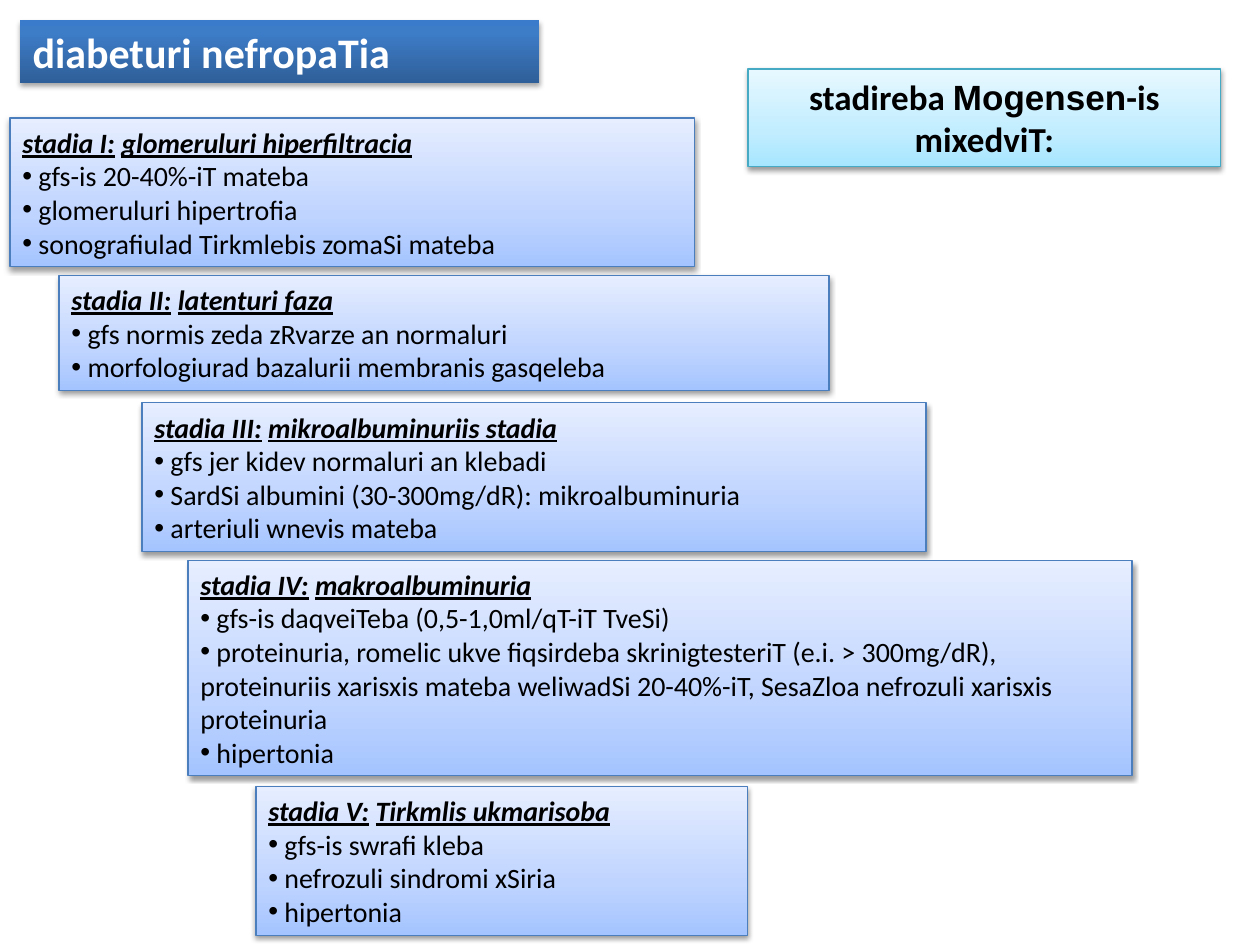
from lxml import etree
from pptx import Presentation
from pptx.dml.color import RGBColor
from pptx.enum import shapes, text
from pptx.oxml import parse_xml
from pptx.oxml.ns import nsdecls, qn
from pptx.util import Pt

FONT = "Calibri"
BLUE = [(0, "A4C4FF"), (35, "BFD4FF"), (100, "E6EEFF")]
CYAN = [(0, "A7E6FF"), (35, "C1EDFF"), (100, "E7F8FF")]
NAVY = [(0, "2F5F99"), (80, "3D7CC7"), (100, "3A7CCB")]

# Position and size in points, number, name, findings
STAGES = [
    ((5.76, 67.5, 391, 85), "I", "glomeruluri hiperfiltracia",
     ["gfs-is 20-40%-iT mateba",
      "glomeruluri hipertrofia",
      "sonografiulad Tirkmlebis zomaSi mateba"]),
    ((33.8, 157.5, 440, 65.5), "II", "latenturi faza",
     ["gfs normis zeda zRvarze an normaluri",
      "morfologiurad bazalurii membranis gasqeleba"]),
    ((81.2, 230.2, 448, 85), "III", "mikroalbuminuriis stadia",
     ["gfs jer kidev normaluri an klebadi",
      "SardSi albumini (30-300mg/dR): mikroalbuminuria",
      "arteriuli wnevis mateba"]),
    ((107.5, 320.5, 539.5, 122.5), "IV", "makroalbuminuria",
     ["gfs-is daqveiTeba (0,5-1,0ml/qT-iT TveSi)",
      "proteinuria, romelic ukve fiqsirdeba skrinigtesteriT (e.i. > 300mg/dR), "
      "proteinuriis xarisxis mateba weliwadSi 20-40%-iT, SesaZloa nefrozuli "
      "xarisxis proteinuria",
      "hipertonia"]),
    ((146.3, 449.4, 281, 85), "V", "Tirkmlis ukmarisoba",
     ["gfs-is swrafi kleba",
      "nefrozuli sindromi xSiria",
      "hipertonia"]),
]


def color(value):
    return RGBColor.from_string(value)


def fill_upward(shape, stops):
    """Fill with a gradient whose first stop lies at the bottom."""
    shape.fill.gradient()
    shape.fill.gradient_angle = 90
    stop_list = shape._element.spPr.find(qn("a:gradFill")).find(qn("a:gsLst"))
    for stop in list(stop_list):
        stop_list.remove(stop)
    for percent, value in stops:
        stop = etree.SubElement(stop_list, qn("a:gs"), pos=str(percent * 1000))
        etree.SubElement(stop, qn("a:srgbClr"), val=value)


def add_shadow(shape, distance, opacity):
    shape.shadow.inherit = False
    effects = shape._element.spPr.find(qn("a:effectLst"))
    effects.append(parse_xml(
        f'<a:outerShdw {nsdecls("a")} blurRad="{Pt(3.1)}" dist="{Pt(distance)}" '
        f'dir="5400000" rotWithShape="0"><a:srgbClr val="000000">'
        f'<a:alpha val="{opacity * 1000}"/></a:srgbClr></a:outerShdw>'))


def add_panel(page, place, stops, line=None, distance=1.6, opacity=38):
    panel = page.shapes.add_shape(shapes.MSO_SHAPE.RECTANGLE, *map(Pt, place))
    fill_upward(panel, stops)
    if line:
        panel.line.color.rgb = color(line)
        panel.line.width = Pt(0.75)
    else:
        panel.line.fill.background()
    add_shadow(panel, distance, opacity)
    frame = panel.text_frame
    frame.word_wrap = True
    frame.auto_size = text.MSO_AUTO_SIZE.SHAPE_TO_FIT_TEXT
    frame.vertical_anchor = text.MSO_ANCHOR.MIDDLE
    frame.paragraphs[0].alignment = text.PP_ALIGN.LEFT
    return frame


def add_span(para, words, size, value="000000", name=FONT, bold=False,
             italic=False, underline=False):
    span = para.add_run()
    span.text = words
    font = span.font
    font.size, font.name = Pt(size), name
    font.color.rgb = color(value)
    font.bold, font.italic, font.underline = bold, italic, underline


def add_bullet(frame, words):
    para = frame.add_paragraph()
    para.alignment = text.PP_ALIGN.LEFT
    properties = para._p.get_or_add_pPr()
    etree.SubElement(properties, qn("a:buFont"), typeface="Arial")
    etree.SubElement(properties, qn("a:buChar"), char="•")
    add_span(para, " " + words, 16)


def add_stage(page, place, number, name, findings):
    frame = add_panel(page, place, BLUE, "4B7EBC")
    heading = frame.paragraphs[0]
    for words, underline in ((f"stadia {number}:", True), (" ", False), (name, True)):
        add_span(heading, words, 16, bold=True, italic=True, underline=underline)
    for finding in findings:
        add_bullet(frame, finding)


def add_title(page):
    frame = add_panel(page, (11.5, 11.5, 296.6, 36), NAVY, distance=1.8, opacity=35)
    frame.vertical_anchor = text.MSO_ANCHOR.TOP
    add_span(frame.paragraphs[0], "diabeturi nefropaTia", 24, "FFFFFF", bold=True)


def add_classification(page):
    frame = add_panel(page, (427.5, 39.4, 270, 55.7), CYAN, "46AAC5")
    para = frame.paragraphs[0]
    para.alignment = text.PP_ALIGN.CENTER
    for words, name in (("stadireba ", FONT), ("Mogensen", "Arial"),
                        ("-is mixedviT:", FONT)):
        add_span(para, words, 20, name=name, bold=True)


def main():
    deck = Presentation()
    deck.slide_width, deck.slide_height = Pt(720), Pt(540)
    page = deck.slides.add_slide(deck.slide_layouts[6])
    add_classification(page)
    for stage in STAGES:
        add_stage(page, *stage)
    add_title(page)
    deck.save("out.pptx")


if __name__ == "__main__":
    main()
